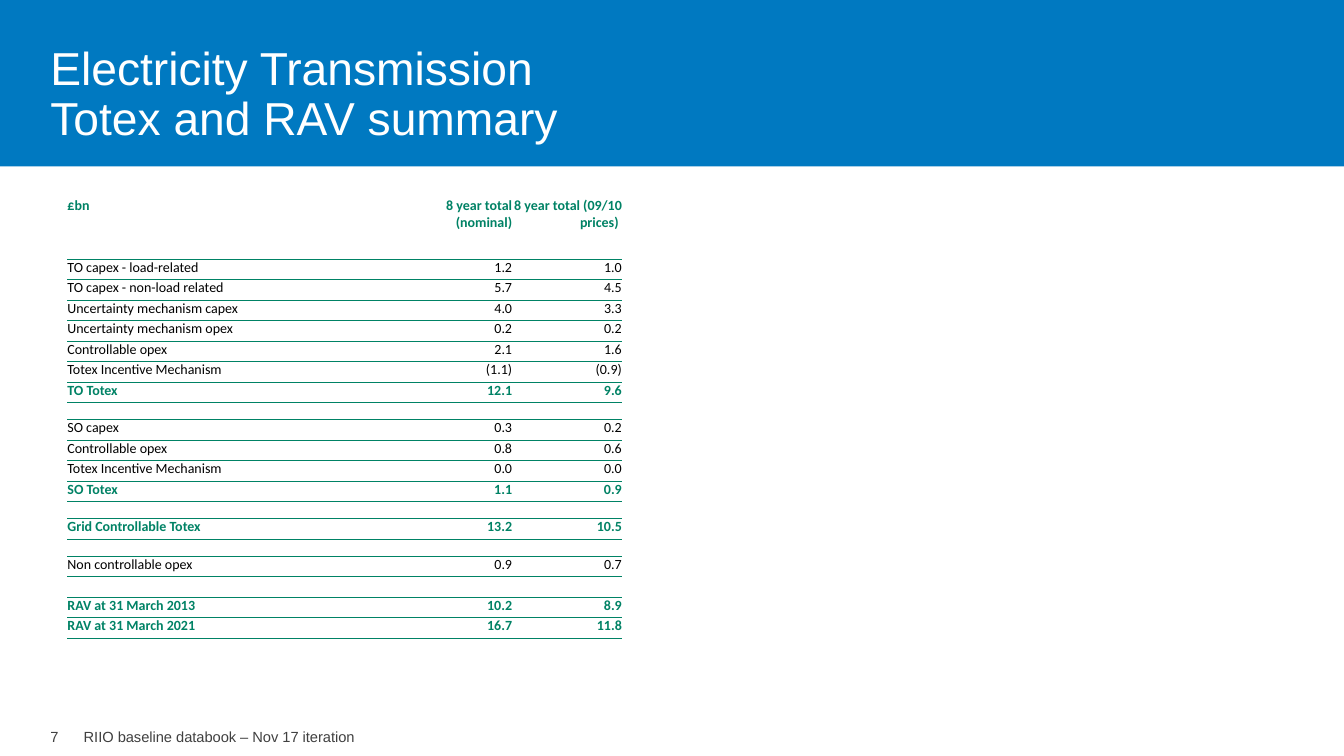
"""Build the Electricity Transmission Totex and RAV summary slide."""
from dataclasses import dataclass

from lxml.etree import SubElement
from pptx import Presentation
from pptx.dml.color import RGBColor
from pptx.enum.shapes import MSO_SHAPE as Shape
from pptx.enum.text import MSO_ANCHOR as Anchor, PP_ALIGN as Align
from pptx.oxml import parse_xml
from pptx.oxml.ns import nsdecls, qn
from pptx.util import Pt

TITLE = "Electricity Transmission\vTotex and RAV summary"
FOOTER = "RIIO baseline databook – Nov 17 iteration"
PAGE_NUMBER = "7"

HEADER, ITEM, TOTAL, GAP, WIDE_GAP = "header", "item", "total", "gap", "wide gap"
BLANK = ("", "", "")
ROWS = [
    (HEADER, ("£bn", "8 year total (nominal)", "8 year total (09/10 prices) ")),
    (ITEM, ("TO capex - load-related", "1.2", "1.0")),
    (ITEM, ("TO capex - non-load related", "5.7", "4.5")),
    (ITEM, ("Uncertainty mechanism capex", "4.0", "3.3")),
    (ITEM, ("Uncertainty mechanism opex", "0.2", "0.2")),
    (ITEM, ("Controllable opex", "2.1", "1.6")),
    (ITEM, ("Totex Incentive Mechanism", "(1.1)", "(0.9)")),
    (TOTAL, ("TO Totex", "12.1", "9.6")),
    (GAP, BLANK),
    (ITEM, ("SO capex", "0.3", "0.2")),
    (ITEM, ("Controllable opex", "0.8", "0.6")),
    (ITEM, ("Totex Incentive Mechanism", "0.0", "0.0")),
    (TOTAL, ("SO Totex", "1.1", "0.9")),
    (GAP, BLANK),
    (TOTAL, ("Grid Controllable Totex", "13.2", "10.5")),
    (GAP, BLANK),
    (ITEM, ("Non controllable opex", "0.9", "0.7")),
    (WIDE_GAP, BLANK),
    (TOTAL, ("RAV at 31 March 2013", "10.2", "8.9")),
    (TOTAL, ("RAV at 31 March 2021", "16.7", "11.8")),
]
ROW_HEIGHTS = {HEADER: 44, ITEM: 14.65, TOTAL: 14.65, GAP: 12.2, WIDE_GAP: 14.65}
COLUMN_WIDTHS = (243.4, 74.2, 78.4)
TABLE_LEFT, TABLE_TOP = 48.2, 141.1
SLIDE_WIDTH, SLIDE_HEIGHT = 960, 540
NO_GRID_STYLE = "{2D5ABB26-0587-4C30-8999-92F81FD0307C}"


@dataclass(frozen=True)
class Theme:
    """Colours, fonts and type sizes."""
    blue: str = "0079C1"
    green: str = "008265"
    white: str = "FFFFFF"
    black: str = "000000"
    grey: str = "404040"
    slide_font: str = "Arial"
    table_font: str = "Calibri"
    title_size: float = 33
    footer_size: float = 10.5
    table_size: float = 10


THEME = Theme()


def style_runs(paragraph, font_name, size, colour, bold=False):
    """Format every run of a paragraph."""
    for run in paragraph.runs:
        run.font.name, run.font.size, run.font.bold = font_name, Pt(size), bold
        run.font.color.rgb = RGBColor.from_string(colour)


def add_text(slide, text, box, size, colour, line_spacing=None, anchor=Anchor.TOP):
    """Add a text box without margins."""
    frame = slide.shapes.add_textbox(*map(Pt, box)).text_frame
    frame.margin_left = frame.margin_right = frame.margin_top = frame.margin_bottom = 0
    frame.word_wrap, frame.vertical_anchor = False, anchor
    frame.text = text
    paragraph = frame.paragraphs[0]
    if line_spacing:
        paragraph.line_spacing = line_spacing
    style_runs(paragraph, THEME.slide_font, size, colour)


def add_border(cell, side, width):
    """Draw one green edge on a cell, ahead of its fill."""
    properties = cell._tc.get_or_add_tcPr()
    line = parse_xml(
        f'<a:{side} {nsdecls("a")} w="{Pt(width)}"><a:solidFill>'
        f'<a:srgbClr val="{THEME.green}"/></a:solidFill></a:{side}>')
    properties.insert(len(properties) - 1, line)


def fill_cell(cell, text, kind, column, top_width, bottom_width):
    """Write and format one table cell."""
    cell.margin_left = cell.margin_right = cell.margin_top = cell.margin_bottom = 0
    cell.vertical_anchor = Anchor.TOP
    cell.fill.solid()
    cell.fill.fore_color.rgb = RGBColor.from_string(THEME.white)
    if top_width:
        add_border(cell, "lnT", top_width)
    add_border(cell, "lnB", bottom_width)
    paragraph = cell.text_frame.paragraphs[0]
    if not text:
        SubElement(paragraph._p, qn("a:endParaRPr"), sz=str(int(THEME.table_size * 100)))
        return
    paragraph.text = text
    paragraph.alignment = Align.RIGHT if column else Align.LEFT
    plain = kind == ITEM
    style_runs(paragraph, THEME.table_font, THEME.table_size,
               THEME.black if plain else THEME.green, not plain)


def add_summary_table(slide):
    """Add the totex and RAV table."""
    heights = [ROW_HEIGHTS[kind] for kind, _ in ROWS]
    box = (TABLE_LEFT, TABLE_TOP, sum(COLUMN_WIDTHS), sum(heights))
    table = slide.shapes.add_table(
        len(ROWS), len(COLUMN_WIDTHS), *map(Pt, box)).table
    table.first_row = table.horz_banding = False
    table._tbl.tblPr.find(qn("a:tableStyleId")).text = NO_GRID_STYLE
    for column, width in zip(table.columns, COLUMN_WIDTHS):
        column.width = Pt(width)
    top_width = None
    for row, height, (kind, texts) in zip(table.rows, heights, ROWS):
        row.height = Pt(height)
        bottom_width = 1 if kind == HEADER else 0.5
        for column, (cell, text) in enumerate(zip(row.cells, texts)):
            fill_cell(cell, text, kind, column, top_width, bottom_width)
        top_width = bottom_width


def main():
    """Build and save the slide."""
    presentation = Presentation()
    presentation.slide_width, presentation.slide_height = Pt(SLIDE_WIDTH), Pt(SLIDE_HEIGHT)
    slide = presentation.slides.add_slide(presentation.slide_layouts[6])

    banner = slide.shapes.add_shape(Shape.RECTANGLE, 0, 0, Pt(SLIDE_WIDTH), Pt(118.8))
    banner.shadow.inherit = False
    banner.fill.solid()
    banner.fill.fore_color.rgb = RGBColor.from_string(THEME.blue)
    banner.line.fill.background()

    add_text(slide, TITLE, (36, 32.4, 375, 72), THEME.title_size, THEME.white,
             0.9, Anchor.MIDDLE)
    add_summary_table(slide)
    add_text(slide, PAGE_NUMBER, (36, 520, 12, 13), THEME.footer_size, THEME.grey)
    add_text(slide, FOOTER, (59.8, 520, 220, 13), THEME.footer_size, THEME.grey)
    presentation.save("out.pptx")


if __name__ == "__main__":
    main()
